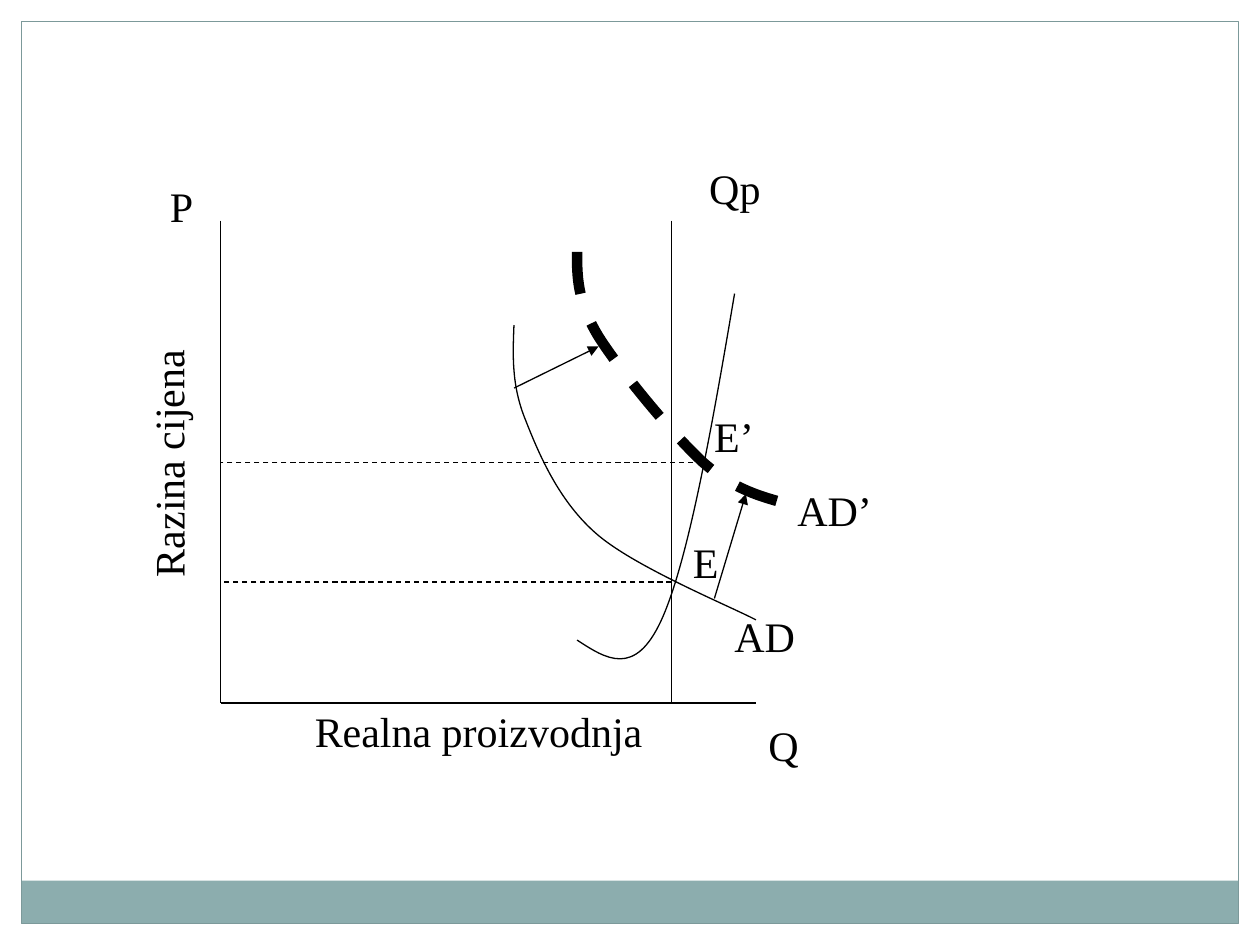
from pptx import Presentation
from pptx.dml.color import RGBColor
from pptx.enum.dml import MSO_LINE
from pptx.enum.shapes import MSO_CONNECTOR, MSO_SHAPE
from pptx.enum.text import MSO_AUTO_SIZE
from pptx.oxml.ns import qn
from pptx.util import Inches, Pt
from lxml.etree import SubElement

# Theme
THEME = {
    "ink": RGBColor(0x00, 0x00, 0x00),
    "band": RGBColor(0x8C, 0xAD, 0xAE),
    "frame": RGBColor(0x7C, 0x99, 0x9A),
    "font": "Times New Roman",
    "size": Pt(24),
    "thin": Pt(0.75),
    "thick": Pt(6),
}
W, H, MARGIN, BAND_H = 10, 7.5, 0.17, 0.34

# Chart geometry, in inches
LEFT, RIGHT, TOP, BOTTOM = 1.75, 6, 1.75, 5.58
POTENTIAL = 5.33            # potential output
P_NEW, P_OLD = 3.67, 4.62   # price levels at E' and E

# (from, to, dashed, arrow)
LINES = [
    ((LEFT, TOP), (LEFT, BOTTOM), False, False),
    ((LEFT, BOTTOM), (RIGHT, BOTTOM), False, False),
    ((POTENTIAL, TOP), (POTENTIAL, BOTTOM), False, False),
    ((5.57, P_NEW), (LEFT, P_NEW), True, False),
    ((POTENTIAL, P_OLD), (LEFT, P_OLD), True, False),
    ((4.08, 3.08), (4.75, 2.75), False, True),
    ((5.67, 4.75), (5.92, 3.92), False, True),
]

# Bezier curves: start point, then two controls and an end per segment
DEMAND = [(4.08, 2.58), (4.07, 2.82), (4.06, 3.06), (4.17, 3.33),
          (4.28, 3.61), (4.44, 3.99), (4.75, 4.25),
          (5.06, 4.51), (5.79, 4.81), (6, 4.92)]
NEW_DEMAND = [(4.58, 2), (4.58, 2.19), (4.58, 2.39), (4.75, 2.67),
              (4.92, 2.94), (5.33, 3.44), (5.58, 3.67),
              (5.83, 3.89), (6.04, 3.94), (6.25, 4)]
SUPPLY = [(4.58, 5.08), (4.81, 5.23), (5.04, 5.38), (5.25, 4.92),
          (5.46, 4.46), (5.65, 3.4), (5.83, 2.33)]
CURVES = [(DEMAND, "thin", False), (NEW_DEMAND, "thick", True),
          (SUPPLY, "thin", False)]

# (text, left, top, width, rotation)
LABEL_H = 0.5
LABELS = [
    ("P", 1.25, 1.38, 0.39, 0),
    ("Qp", 5.53, 1.24, 0.61, 0),
    ("Q", 6, 5.66, 0.45, 0),
    ("AD", 5.73, 4.8, 0.68, 0),
    ("AD’", 6.23, 3.8, 0.8, 0),
    ("E", 5.4, 4.21, 0.4, 0),
    ("E’", 5.57, 3.21, 0.52, 0),
    ("Realna proizvodnja", 2.4, 5.55, 2.8, 0),
    ("Razina cijena", 0.32, 3.42, 2.02, 269.8),
]


def style_line(line, width="thin", dashed=False, color="ink"):
    line.color.rgb = THEME[color]
    line.width = THEME[width]
    if dashed:
        line.dash_style = MSO_LINE.DASH


def add_rect(s, left, top, width, height):
    sp = s.shapes.add_shape(MSO_SHAPE.RECTANGLE, Inches(left), Inches(top),
                            Inches(width), Inches(height))
    sp.shadow.inherit = False
    return sp


def add_line(s, start, end, dashed, arrow):
    cx = s.shapes.add_connector(MSO_CONNECTOR.STRAIGHT,
                                *map(Inches, start + end))
    style_line(cx.line, dashed=dashed)
    if arrow:
        SubElement(cx.line._get_or_add_ln(), qn("a:tailEnd"), type="triangle")
    SubElement(cx._element.spPr, qn("a:effectLst"))


def add_curve(s, points, width, dashed):
    pts = [(Inches(x), Inches(y)) for x, y in points]
    builder = s.shapes.build_freeform(*pts[0])
    builder.add_line_segments(pts[1:], close=False)
    sp = builder.convert_to_shape()
    # Join every three straight segments into one cubic segment
    path = sp._element.spPr.find(".//" + qn("a:path"))
    steps = path.findall(qn("a:lnTo"))
    for i in range(0, len(steps), 3):
        cubic = SubElement(path, qn("a:cubicBezTo"))
        for step in steps[i:i + 3]:
            cubic.append(step[0])
            path.remove(step)
    sp.fill.background()
    sp.shadow.inherit = False
    style_line(sp.line, width, dashed)


def add_label(s, text, left, top, width, rotation):
    sp = s.shapes.add_textbox(Inches(left), Inches(top),
                              Inches(width), Inches(LABEL_H))
    sp.rotation = rotation
    tf = sp.text_frame
    tf.word_wrap = False
    tf.auto_size = MSO_AUTO_SIZE.SHAPE_TO_FIT_TEXT
    tf.text = text
    font = tf.paragraphs[0].runs[0].font
    font.name, font.size = THEME["font"], THEME["size"]
    font.color.rgb = THEME["ink"]


def main():
    prs = Presentation()
    prs.slide_width, prs.slide_height = Inches(W), Inches(H)
    s = prs.slides.add_slide(prs.slide_layouts[6])

    # Bottom band and frame
    inner_w, inner_h = W - 2 * MARGIN, H - 2 * MARGIN
    band = add_rect(s, MARGIN, H - MARGIN - BAND_H, inner_w, BAND_H)
    band.fill.solid()
    band.fill.fore_color.rgb = THEME["band"]
    band.line.fill.background()
    frame = add_rect(s, MARGIN, MARGIN, inner_w, inner_h)
    frame.fill.background()
    style_line(frame.line, color="frame")

    # Diagram
    for line in LINES:
        add_line(s, *line)
    for curve in CURVES:
        add_curve(s, *curve)
    for label in LABELS:
        add_label(s, *label)

    prs.save("out.pptx")


if __name__ == "__main__":
    main()
